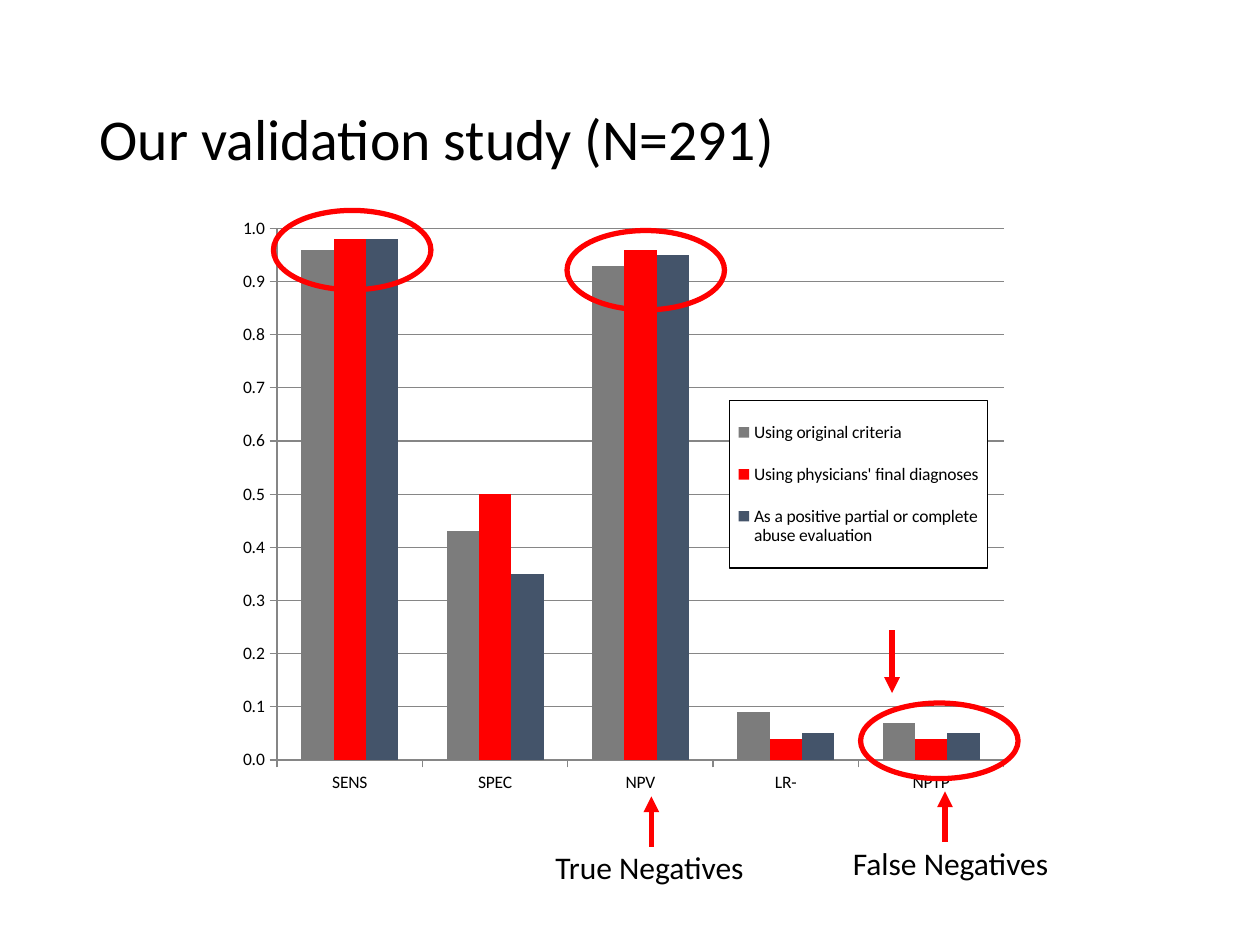
from lxml import etree
from pptx import Presentation
from pptx.chart.data import CategoryChartData
from pptx.dml.color import RGBColor
from pptx.enum.chart import XL_CHART_TYPE, XL_LEGEND_POSITION, XL_TICK_MARK
from pptx.enum.shapes import MSO_CONNECTOR, MSO_SHAPE
from pptx.enum.text import MSO_ANCHOR, MSO_AUTO_SIZE, PP_ALIGN
from pptx.oxml import parse_xml
from pptx.oxml.ns import nsdecls, qn
from pptx.util import Inches, Pt

FONT = "Calibri"
BLACK = RGBColor(0x00, 0x00, 0x00)
RED = RGBColor(0xFF, 0x00, 0x00)
GREY = RGBColor(0x7C, 0x7C, 0x7C)
SLATE = RGBColor(0x44, 0x54, 0x6A)
GRID = RGBColor(0x86, 0x86, 0x86)

MEASURES = ["SENS", "SPEC", "NPV", "LR-", "NPTP"]
SERIES = [
    ("Using original criteria", [0.96, 0.43, 0.93, 0.09, 0.07], GREY),
    ("Using physicians' final diagnoses", [0.98, 0.5, 0.96, 0.04, 0.04], RED),
    ("As a positive partial or complete abuse evaluation",
     [0.98, 0.35, 0.95, 0.05, 0.05], SLATE),
]


def set_font(font, size):
    font.name = FONT
    font.size = Pt(size)
    font.color.rgb = BLACK


def set_layout(element, index, x, y, width, height, inner=False):
    """Give a chart part a manual layout, in fractions of the chart."""
    for old in element.findall(qn("c:layout")):
        element.remove(old)
    target = '<c:layoutTarget val="inner"/>' if inner else ""
    element.insert(index, parse_xml(
        f'<c:layout {nsdecls("c")}><c:manualLayout>{target}'
        '<c:xMode val="edge"/><c:yMode val="edge"/>'
        f'<c:x val="{x}"/><c:y val="{y}"/><c:w val="{width}"/><c:h val="{height}"/>'
        '</c:manualLayout></c:layout>'))


def add_title(slide, left, top, width, height):
    title = slide.shapes.title
    title.left, title.top, title.width, title.height = left, top, width, height
    frame = title.text_frame
    frame.text = "Our validation study (N=291)"
    frame.vertical_anchor = MSO_ANCHOR.MIDDLE
    paragraph = frame.paragraphs[0]
    paragraph.alignment = PP_ALIGN.LEFT
    paragraph.line_spacing = 0.9
    set_font(paragraph.font, 33)


def style_legend(chart):
    chart.has_legend = True
    legend = chart.legend
    legend.position = XL_LEGEND_POSITION.RIGHT
    legend.include_in_layout = False
    set_font(legend.font, 10)
    element = legend._element
    set_layout(element, 1, 0.63, 0.31, 0.32, 0.27)
    # Framed white box over the gridlines
    element.find(qn("c:overlay")).addnext(parse_xml(
        f'<c:spPr {nsdecls("c", "a")}>'
        '<a:solidFill><a:srgbClr val="FFFFFF"/></a:solidFill>'
        '<a:ln w="9525"><a:solidFill><a:srgbClr val="000000"/></a:solidFill></a:ln>'
        '</c:spPr>'))


def add_results_chart(slide, left, top, width, height):
    data = CategoryChartData(number_format="0.00")
    data.categories = MEASURES
    for name, values, _ in SERIES:
        data.add_series(name, values)
    chart = slide.shapes.add_chart(
        XL_CHART_TYPE.COLUMN_CLUSTERED, left, top, width, height, data).chart
    chart.has_title = False
    set_font(chart.font, 10)

    # Columns
    plot = chart.plots[0]
    plot.gap_width = 150
    plot.overlap = 0
    plot.vary_by_categories = False
    for series, (_, _, color) in zip(plot.series, SERIES):
        series.format.fill.solid()
        series.format.fill.fore_color.rgb = color
        series.invert_if_negative = False

    # Axes
    value_axis = chart.value_axis
    value_axis.minimum_scale, value_axis.maximum_scale = 0, 1
    value_axis.major_unit = 0.1
    value_axis.tick_labels.number_format = "0.0"
    value_axis.tick_labels.number_format_is_linked = False
    value_axis.has_major_gridlines = True
    value_axis.major_gridlines.format.line.color.rgb = GRID
    for axis in (value_axis, chart.category_axis):
        axis.major_tick_mark = XL_TICK_MARK.OUTSIDE
        axis.format.line.color.rgb = GRID
        set_font(axis.tick_labels.font, 10)

    plot_area = chart._chartSpace.find(qn("c:chart")).find(qn("c:plotArea"))
    set_layout(plot_area, 0, 0.07, 0.033, 0.9, 0.856, inner=True)
    style_legend(chart)


def add_ring(slide, left, top, width, height):
    ring = slide.shapes.add_shape(MSO_SHAPE.OVAL, left, top, width, height)
    ring.shadow.inherit = False
    ring.fill.background()
    ring.line.color.rgb = RED
    ring.line.width = Pt(3)


def add_arrow(slide, x, start, end):
    arrow = slide.shapes.add_connector(MSO_CONNECTOR.STRAIGHT, x, start, x, end)
    arrow.line.color.rgb = RED
    arrow.line.width = Pt(3)
    arrow.line._get_or_add_ln().append(
        parse_xml(f'<a:tailEnd {nsdecls("a")} type="triangle"/>'))
    etree.SubElement(arrow._element.spPr, qn("a:effectLst"))


def add_label(slide, text, left, top, width, height):
    frame = slide.shapes.add_textbox(left, top, width, height).text_frame
    frame.word_wrap = False
    frame.auto_size = MSO_AUTO_SIZE.SHAPE_TO_FIT_TEXT
    frame.text = text
    set_font(frame.paragraphs[0].font, 18)


def main():
    presentation = Presentation()
    presentation.slide_width, presentation.slide_height = Inches(10), Inches(7.5)
    slide = presentation.slides.add_slide(presentation.slide_layouts[5])

    add_title(slide, Inches(0.69), Inches(0.4), Inches(8.62), Inches(1.45))
    add_results_chart(slide, Inches(1.75), Inches(1.65), Inches(6.41), Inches(4.93))

    # Rings around the NPTP, SENS and NPV columns
    for left, top, height in [(6.83, 5.58, 0.6), (2.17, 1.67, 0.63), (4.5, 1.83, 0.63)]:
        add_ring(slide, Inches(left), Inches(top), Inches(1.25), Inches(height))

    # Callouts below the chart
    for text, left, top, width in [("True Negatives", 4.31, 6.68, 1.71),
                                   ("False Negatives", 6.67, 6.65, 1.77)]:
        add_label(slide, text, Inches(left), Inches(top), Inches(width), Inches(0.4))
    for x, start, end in [(7.08, 5, 5.5), (5.17, 6.72, 6.32), (7.5, 6.68, 6.28)]:
        add_arrow(slide, Inches(x), Inches(start), Inches(end))

    presentation.save("out.pptx")


if __name__ == "__main__":
    main()
